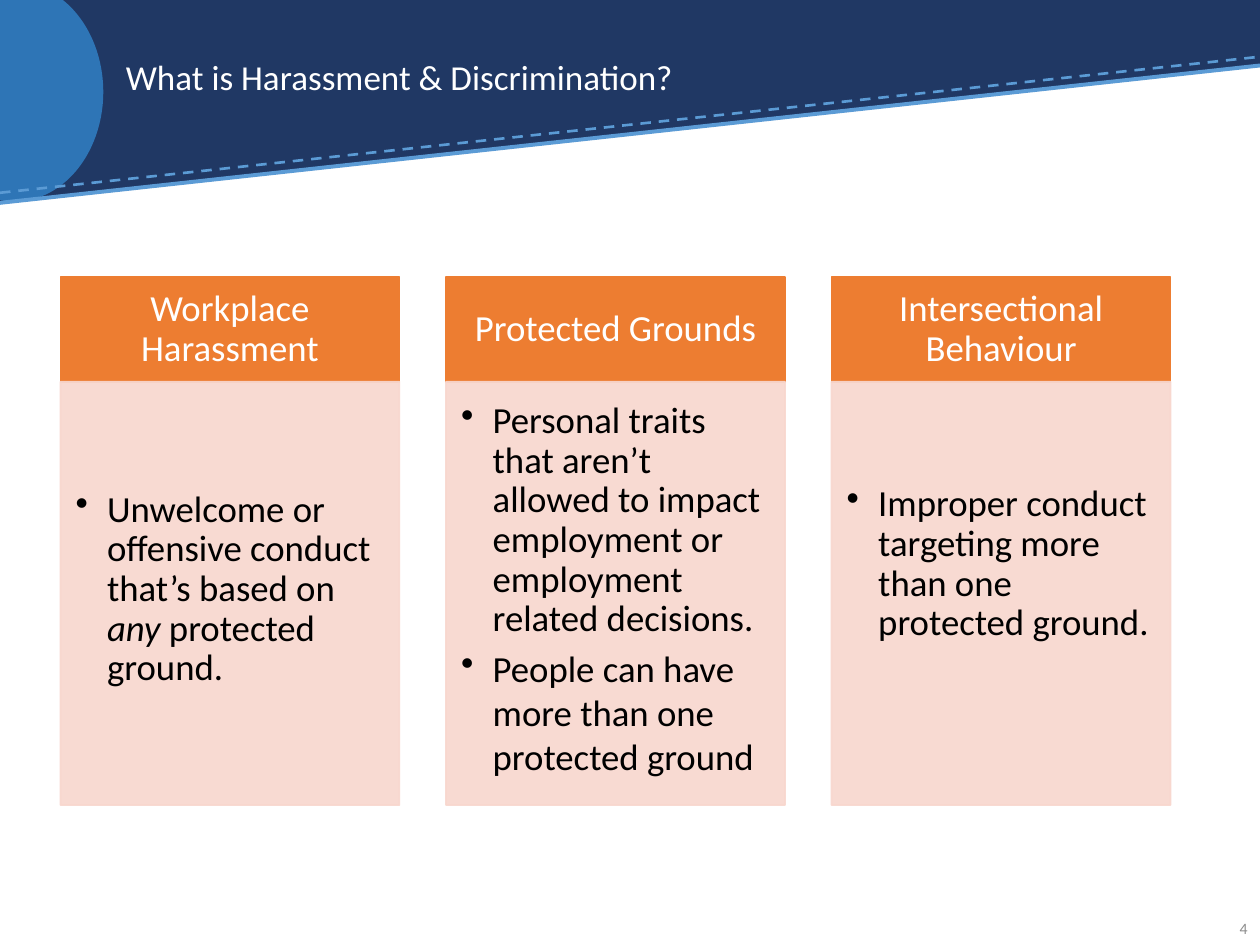
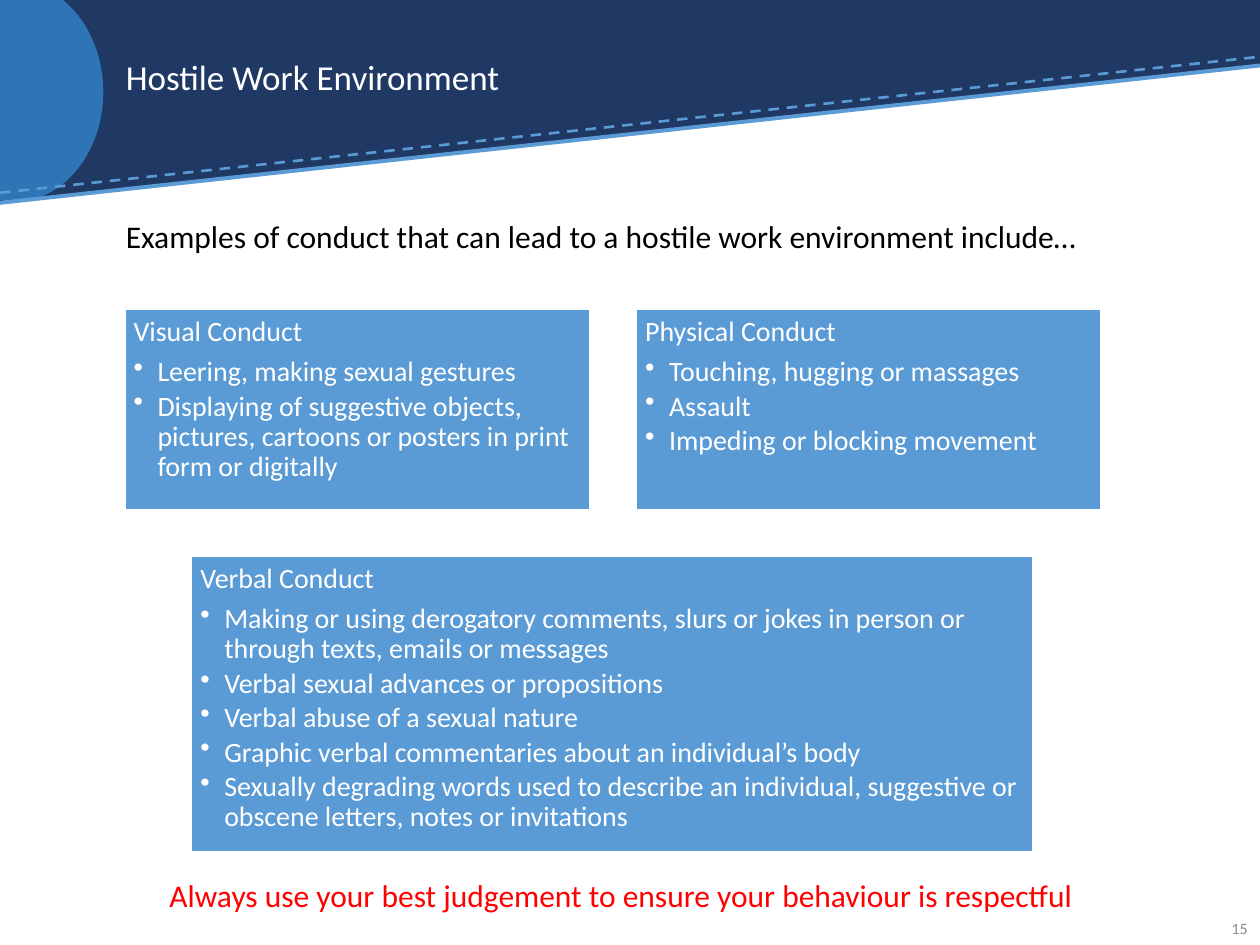
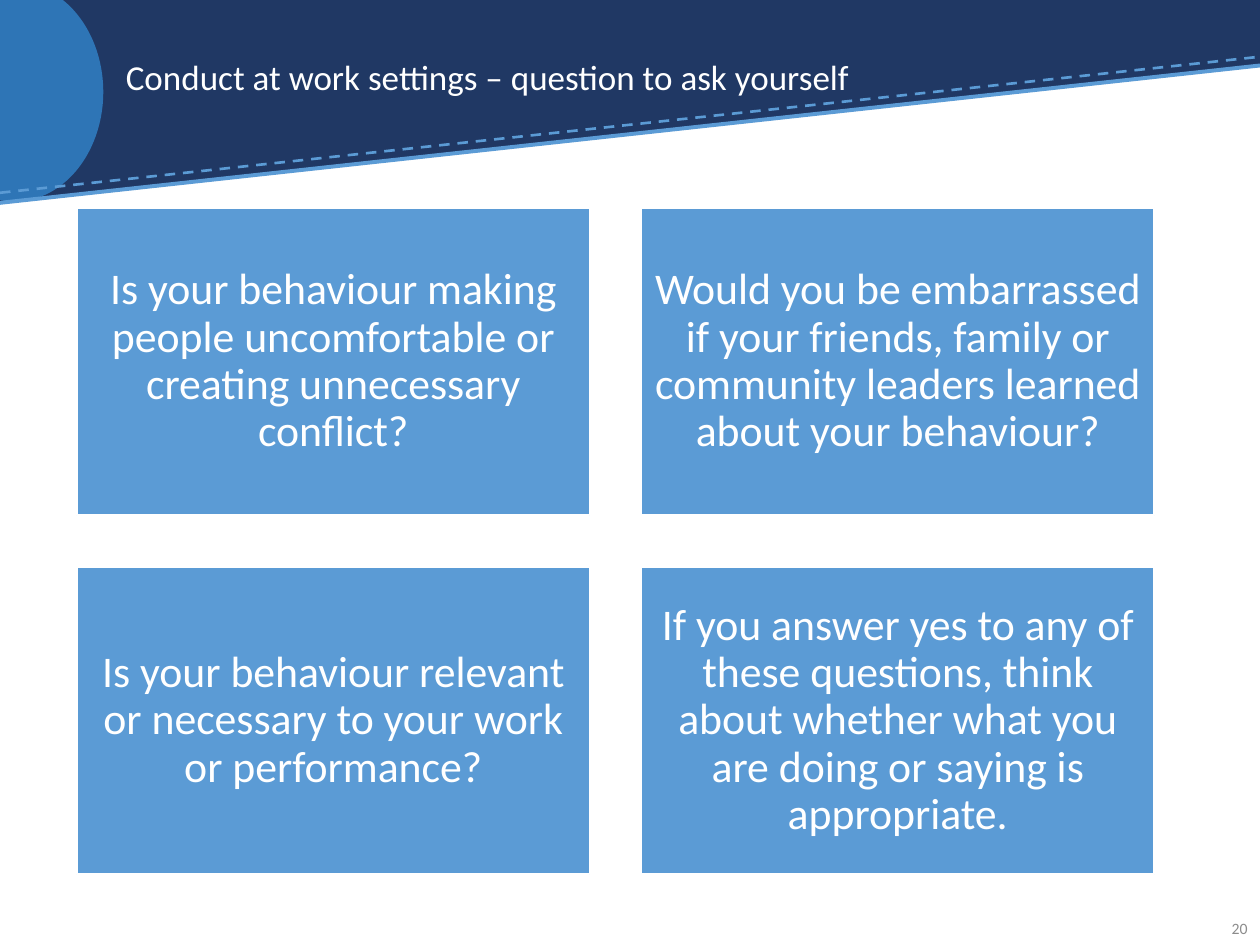
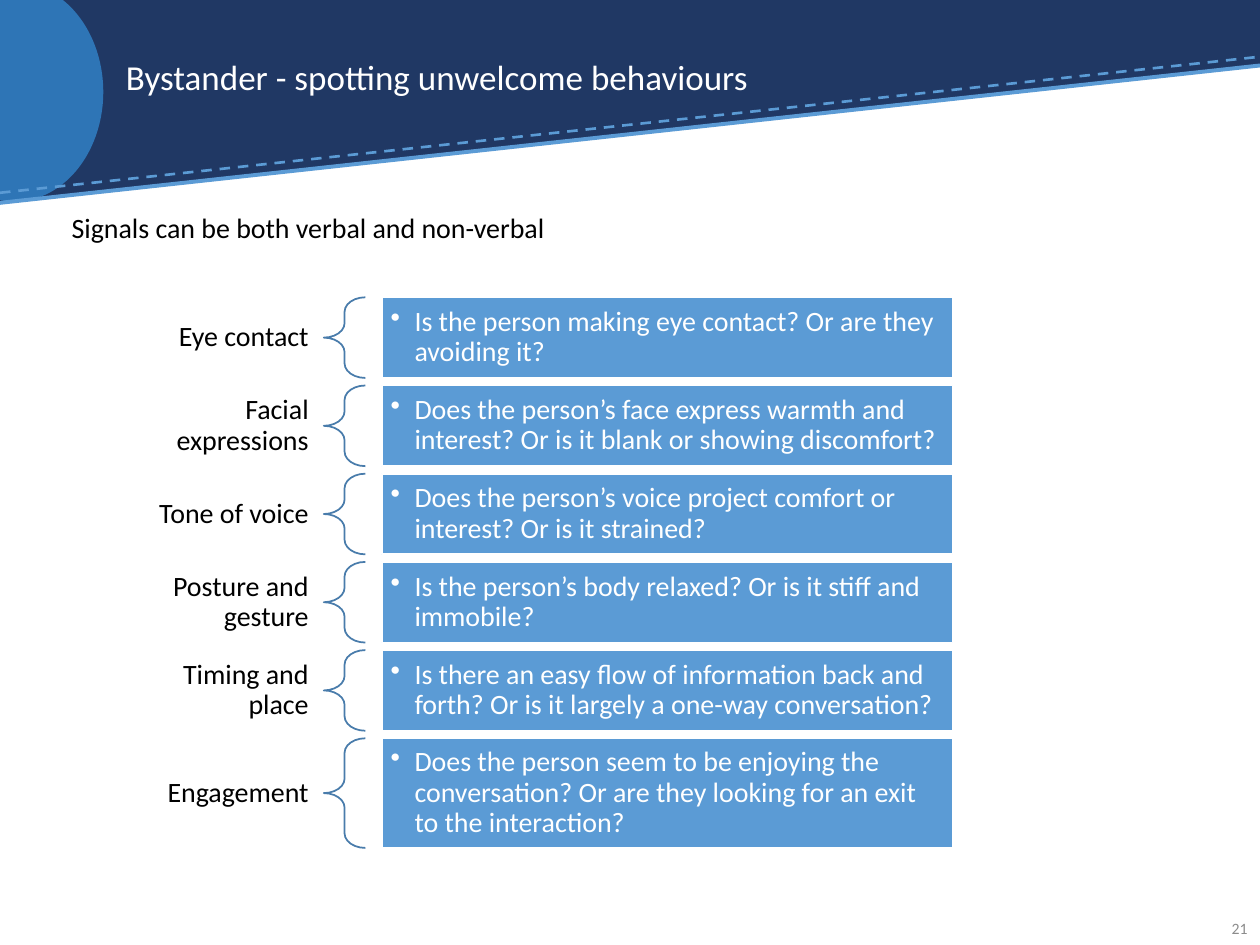
from dataclasses import dataclass
from typing import NamedTuple

from lxml.etree import SubElement
from pptx import Presentation
from pptx.dml.color import RGBColor
from pptx.enum.dml import MSO_LINE_DASH_STYLE as Dash
from pptx.enum.shapes import MSO_CONNECTOR as Connector
from pptx.enum.shapes import MSO_SHAPE as Preset
from pptx.enum.text import MSO_ANCHOR as Anchor
from pptx.enum.text import PP_ALIGN as Align
from pptx.oxml.ns import qn
from pptx.util import Inches, Pt

COLORS = {
    "navy": "203864",
    "circle": "2E75B6",
    "blue": "5B9BD5",
    "brace": "497CAB",
    "orange": "ED7D31",
    "peach": "F8D7CE",
    "white": "FFFFFF",
    "black": "000000",
    "red": "FF0000",
    "gray": "8C8C8C",
}
FONT = "Calibri"
HEADING_SPACE = 0.35
BULLET_SPACE = 0.15


class Box(NamedTuple):
    left: float
    top: float
    width: float
    height: float

    def lengths(self) -> list:
        return [Inches(value) for value in self]


class Insets(NamedTuple):
    left: float = 0.1
    top: float = 0.05
    right: float = 0.1
    bottom: float = 0.05


class Span(NamedTuple):
    text: str
    italic: bool = False


@dataclass(frozen=True)
class Style:
    size: float
    color: str
    align: Align = Align.LEFT
    line_spacing: float = 0.9
    space_after: float = 0
    indent: float = 0


@dataclass(frozen=True)
class Line:
    spans: tuple
    style: Style


@dataclass(frozen=True)
class Frame:
    anchor: Anchor = Anchor.TOP
    insets: Insets = Insets()


@dataclass(frozen=True)
class BandLine:
    start: float
    end: float
    width: float
    dash: Dash = Dash.SOLID


@dataclass(frozen=True)
class Card:
    heading: str
    lines: tuple
    bottom_inset: float = 0.18


@dataclass(frozen=True)
class ConductPanel:
    box: Box
    heading: str
    bullets: tuple


@dataclass(frozen=True)
class Signal:
    label: str
    question: str
    label_height: float = 0.35
    height: float = 0.64


TITLE = Style(20, "white")
PAGE_NUMBER = Style(9, "gray", Align.RIGHT, 1)
CARD_HEADING = Style(21, "white", Align.CENTER, 0.9, HEADING_SPACE)
CARD_BULLET = Style(21, "black", space_after=BULLET_SPACE, indent=0.25)
LOOSE_BULLET = Style(21, "black", line_spacing=1, space_after=BULLET_SPACE, indent=0.25)
INTRO = Style(18, "black", line_spacing=1)
REMINDER = Style(18, "red", Align.CENTER, 1)
PANEL_HEADING = Style(16, "white", space_after=HEADING_SPACE)
PANEL_BULLET = Style(16, "white", space_after=BULLET_SPACE, indent=0.19)
QUESTION = Style(25, "white", Align.CENTER, 0.9, HEADING_SPACE)
SIGNAL_INTRO = Style(16, "black")
SIGNAL_LABEL = Style(16, "black", Align.RIGHT, 0.9, HEADING_SPACE)

MIDDLE = Frame(Anchor.MIDDLE)
PANEL_INSETS = Insets(0.07, 0.07, 0.07, 0.07)

BAND_LINES = (
    BandLine(1.53, 0.45, 1.5, Dash.DASH),
    BandLine(1.61, 0.52, 2.25),
)

CARDS = (
    Card(
        "Workplace Harassment",
        (
            Line(
                (
                    Span("Unwelcome or offensive conduct that’s based on "),
                    Span("any ", True),
                    Span("protected ground."),
                ),
                CARD_BULLET,
            ),
        ),
    ),
    Card(
        "Protected Grounds",
        (
            Line(
                (Span("Personal traits that aren’t allowed to impact employment or employment related decisions."),),
                CARD_BULLET,
            ),
            Line((Span("People can have more than one protected ground"),), LOOSE_BULLET),
        ),
    ),
    Card(
        "Intersectional Behaviour",
        (Line((Span("Improper conduct targeting more than one protected ground."),), CARD_BULLET),),
        bottom_inset=0.58,
    ),
)

CONDUCT_PANELS = (
    ConductPanel(
        Box(0.99, 2.45, 3.69, 1.6),
        "Visual Conduct",
        (
            "Leering, making sexual gestures",
            "Displaying of suggestive objects, pictures, cartoons or posters in print form or digitally",
        ),
    ),
    ConductPanel(
        Box(5.05, 2.45, 3.69, 1.6),
        "Physical Conduct",
        ("Touching, hugging or massages", "Assault", "Impeding or blocking movement"),
    ),
    ConductPanel(
        Box(1.52, 4.41, 6.68, 2.35),
        "Verbal Conduct",
        (
            "Making or using derogatory comments, slurs or jokes in person or through texts, emails or messages",
            "Verbal sexual advances or propositions",
            "Verbal abuse of a sexual nature",
            "Graphic verbal commentaries about an individual’s body",
            "Sexually degrading words used to describe an individual, suggestive or obscene letters, notes or invitations",
        ),
    ),
)

QUESTIONS = (
    "Is your behaviour making people uncomfortable or creating unnecessary conflict?",
    "Would you be embarrassed if your friends, family or community leaders learned about your behaviour?",
    "Is your behaviour relevant or necessary to your work or performance?",
    "If you answer yes to any of these questions, think about whether what you are doing or saying is appropriate.",
)

SIGNALS = (
    Signal("Eye contact", "Is the person making eye contact? Or are they avoiding it?"),
    Signal(
        "Facial expressions",
        "Does the person’s face express warmth and interest? Or is it blank or showing discomfort?",
        0.58,
    ),
    Signal("Tone of voice", "Does the person’s voice project comfort or interest? Or is it strained?"),
    Signal("Posture and gesture", "Is the person’s body relaxed? Or is it stiff and immobile?", 0.58),
    Signal(
        "Timing and place",
        "Is there an easy flow of information back and forth? Or is it largely a one-way conversation?",
        0.58,
    ),
    Signal(
        "Engagement",
        "Does the person seem to be enjoying the conversation? Or are they looking for an exit to the interaction?",
        height=0.87,
    ),
)


def rgb(name: str) -> RGBColor:
    return RGBColor.from_string(COLORS[name])


def apply_format(target, values: dict) -> None:
    for name, value in values.items():
        setattr(target, name, value)


def plain(text: str, style: Style) -> Line:
    return Line((Span(text),), style)


def add_bullet(paragraph, indent: float) -> None:
    properties = paragraph._p.get_or_add_pPr()
    properties.set("marL", str(Inches(indent)))
    properties.set("indent", str(-Inches(indent)))
    SubElement(properties, qn("a:buChar")).set("char", "•")


def write_text(shape, lines: tuple, frame: Frame) -> None:
    text_frame = shape.text_frame
    apply_format(text_frame, {"word_wrap": True, "vertical_anchor": frame.anchor})
    apply_format(
        text_frame,
        {f"margin_{side}": Inches(value) for side, value in frame.insets._asdict().items()},
    )
    for index, line in enumerate(lines):
        paragraph = text_frame.add_paragraph() if index else text_frame.paragraphs[0]
        style = line.style
        if style.indent:
            add_bullet(paragraph, style.indent)
        apply_format(
            paragraph,
            {
                "alignment": style.align,
                "line_spacing": style.line_spacing,
                "space_after": Pt(style.size * style.space_after),
            },
        )
        for span in line.spans:
            run = paragraph.add_run()
            run.text = span.text
            apply_format(run.font, {"name": FONT, "size": Pt(style.size), "italic": span.italic})
            run.font.color.rgb = rgb(style.color)


def add_text(slide, box: Box, line: Line, frame: Frame = Frame()):
    shape = slide.shapes.add_textbox(*box.lengths())
    write_text(shape, (line,), frame)
    return shape


def add_preset(slide, preset: Preset, box: Box, fill: str = "", outline: str = ""):
    shape = slide.shapes.add_shape(preset, *box.lengths())
    shape.shadow.inherit = False
    if fill:
        shape.fill.solid()
        shape.fill.fore_color.rgb = rgb(fill)
    else:
        shape.fill.background()
    if outline:
        shape.line.color.rgb = rgb(outline)
        shape.line.width = Pt(1)
    else:
        shape.line.fill.background()
    return shape


def add_panel(slide, box: Box, lines: tuple, frame: Frame, fill: str = "blue", outline: str = "white"):
    shape = add_preset(slide, Preset.RECTANGLE, box, fill, outline)
    write_text(shape, lines, frame)
    return shape


def set_opacity(shape, percent: int) -> None:
    for color in shape.element.spPr.iter(qn("a:srgbClr")):
        SubElement(color, qn("a:alpha")).set("val", str(percent * 1000))


def add_band_line(slide, band_line: BandLine) -> None:
    connector = slide.shapes.add_connector(
        Connector.STRAIGHT, Inches(0), Inches(band_line.start), Inches(10), Inches(band_line.end)
    )
    apply_format(connector.line, {"width": Pt(band_line.width), "dash_style": band_line.dash})
    connector.line.color.rgb = rgb("blue")
    SubElement(connector.element.spPr, qn("a:effectLst"))


def add_base_slide(presentation, title: str, number: int):
    slide = presentation.slides.add_slide(presentation.slide_layouts[6])
    add_preset(slide, Preset.RECTANGLE, Box(0, 0, 10, 0.52), "navy")
    wedge = add_preset(slide, Preset.RIGHT_TRIANGLE, Box(0, 0.51, 10, 1.09), "navy")
    wedge.element.spPr.find(qn("a:xfrm")).set("flipV", "1")
    add_preset(slide, Preset.OVAL, Box(-0.59, -0.14, 1.41, 1.74), "circle")
    for band_line in BAND_LINES:
        add_band_line(slide, band_line)
    add_text(slide, Box(0.9, 0.2, 8.05, 0.86), plain(title, TITLE), MIDDLE)
    add_text(slide, Box(9.47, 7.17, 0.53, 0.4), plain(str(number), PAGE_NUMBER), MIDDLE)
    return slide


def build_definitions(presentation) -> None:
    slide = add_base_slide(presentation, "What is Harassment & Discrimination?", 4)
    width, gap = 2.69, 0.37
    heading_frame = Frame(Anchor.MIDDLE, Insets(0.16, 0.09, 0.16, 0.09))
    for index, card in enumerate(CARDS):
        left = 0.48 + index * (width + gap)
        heading = (plain(card.heading, CARD_HEADING),)
        add_panel(slide, Box(left, 2.2, width, 0.83), heading, heading_frame, "orange", "orange")
        body_frame = Frame(Anchor.MIDDLE, Insets(0.12, 0.12, 0.16, card.bottom_inset))
        body = add_panel(slide, Box(left, 3.03, width, 3.36), card.lines, body_frame, "peach", "peach")
        set_opacity(body, 90)


def build_hostile_environment(presentation) -> None:
    slide = add_base_slide(presentation, "Hostile Work Environment", 15)
    add_text(
        slide,
        Box(0.41, 6.9, 9.04, 0.4),
        plain("Always use your best judgement to ensure your behaviour is respectful", REMINDER),
    )
    add_text(
        slide,
        Box(0.9, 1.67, 8.58, 0.4),
        plain("Examples of conduct that can lead to a hostile work environment include…", INTRO),
    )
    for panel in CONDUCT_PANELS:
        bullets = tuple(plain(text, PANEL_BULLET) for text in panel.bullets)
        lines = (plain(panel.heading, PANEL_HEADING), *bullets)
        add_panel(slide, panel.box, lines, Frame(insets=PANEL_INSETS))


def build_questions(presentation) -> None:
    slide = add_base_slide(presentation, "Conduct at work settings – question to ask yourself", 20)
    width, height, gap = 4.07, 2.44, 0.41
    frame = Frame(Anchor.MIDDLE, Insets(0.1, 0.1, 0.1, 0.1))
    for index, question in enumerate(QUESTIONS):
        row, column = divmod(index, 2)
        box = Box(0.61 + column * (width + gap), 1.65 + row * (height + gap), width, height)
        add_panel(slide, box, (plain(question, QUESTION),), frame)


def build_signals(presentation) -> None:
    slide = add_base_slide(presentation, "Bystander - spotting unwelcome behaviours", 21)
    add_text(
        slide,
        Box(0.47, 1.65, 8.83, 5.3),
        plain("Signals can be both verbal and non-verbal", SIGNAL_INTRO),
    )
    label_frame = Frame(Anchor.MIDDLE, Insets(0.12, 0.04, 0.12, 0.04))
    question_frame = Frame(Anchor.MIDDLE, PANEL_INSETS)
    for index, signal in enumerate(SIGNALS):
        top = 2.36 + index * 0.7
        label_top = top + (signal.height - signal.label_height) / 2
        label_box = Box(0.9, label_top, 1.67, signal.label_height)
        add_text(slide, label_box, plain(signal.label, SIGNAL_LABEL), label_frame)
        brace = add_preset(slide, Preset.LEFT_BRACE, Box(2.57, top, 0.33, signal.height), outline="brace")
        brace.adjustments[0] = 0.35
        brace.adjustments[1] = 0.5
        question = (plain(signal.question, PANEL_BULLET),)
        add_panel(slide, Box(3.03, top, 4.53, signal.height), question, question_frame)


def main() -> None:
    presentation = Presentation()
    apply_format(presentation, {"slide_width": Inches(10), "slide_height": Inches(7.5)})
    for build in (build_definitions, build_hostile_environment, build_questions, build_signals):
        build(presentation)
    presentation.save("out.pptx")


if __name__ == "__main__":
    main()
